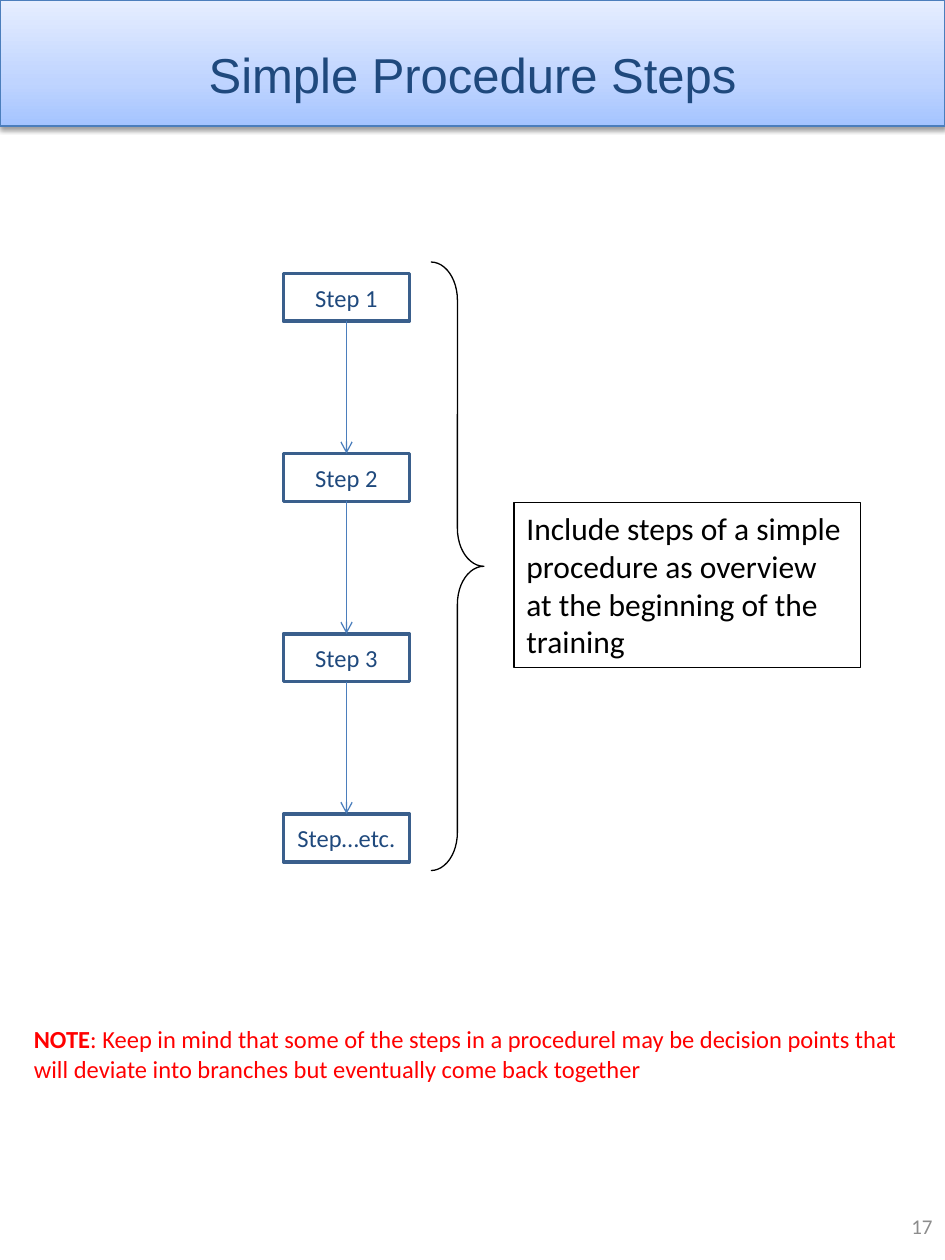
from lxml import etree
from pptx import Presentation
from pptx.dml.color import RGBColor
from pptx.enum.shapes import MSO_CONNECTOR, MSO_SHAPE
from pptx.enum.text import MSO_ANCHOR, MSO_AUTO_SIZE, PP_ALIGN
from pptx.oxml.ns import qn
from pptx.util import Inches, Pt

RECTANGLE, RIGHT_BRACE = MSO_SHAPE.RECTANGLE, MSO_SHAPE.RIGHT_BRACE
STRAIGHT = MSO_CONNECTOR.STRAIGHT
TOP, MIDDLE = MSO_ANCHOR.TOP, MSO_ANCHOR.MIDDLE
LEFT, CENTER, RIGHT = PP_ALIGN.LEFT, PP_ALIGN.CENTER, PP_ALIGN.RIGHT
NO_AUTOFIT = MSO_AUTO_SIZE.NONE
BOTTOM_SITE, TOP_SITE = 2, 0

COLORS = {
    "navy": "1F497D",
    "step_edge": "3A5F8C",
    "blue": "4B7EBC",
    "white": "FFFFFF",
    "black": "000000",
    "red": "FF0000",
    "gray": "8C8C8C",
}
BANNER_STOPS = [(0, "A4C4FF"), (35, "BFD4FF"), (100, "E6EEFF")]
STEPS = ["Step 1", "Step 2", "Step 3", "Step…etc."]


def rgb(name):
    """Return the named palette colour."""
    return RGBColor.from_string(COLORS[name])


def set_line(outlined, color, width):
    """Give a shape or connector a solid line."""
    outlined.line.color.rgb = rgb(color)
    outlined.line.width = Pt(width)


def set_text(holder, runs, size, color, align=LEFT, anchor=TOP, font="Calibri"):
    """Write one paragraph of (text, bold) runs."""
    frame = holder.text_frame
    frame.word_wrap = True
    frame.auto_size = NO_AUTOFIT
    frame.vertical_anchor = anchor
    paragraph = frame.paragraphs[0]
    paragraph.alignment = align
    for text, bold in runs:
        run = paragraph.add_run()
        run.text = text
        run.font.name = font
        run.font.size = Pt(size)
        run.font.bold = bold
        run.font.color.rgb = rgb(color)


def add_block(slide, preset, box, edge, width, fill=None):
    """Add a preset shape with no shadow and an optional fill."""
    block = slide.shapes.add_shape(preset, *map(Inches, box))
    block.shadow.inherit = False
    if fill:
        block.fill.solid()
        block.fill.fore_color.rgb = rgb(fill)
    else:
        block.fill.background()
    set_line(block, edge, width)
    return block


def add_label(slide, box, runs, size, color, align=LEFT, anchor=TOP):
    """Add a text box."""
    label = slide.shapes.add_textbox(*map(Inches, box))
    set_text(label, runs, size, color, align, anchor)


def add_color(parent, value):
    """Append an RGB colour element."""
    return etree.SubElement(parent, qn("a:srgbClr"), val=value)


def add_header(slide, box):
    """Place the shaded banner and the title on it."""
    left, top, width, height = box
    banner = add_block(slide, RECTANGLE, box, "blue", 0.75)
    banner.fill.gradient()
    banner.fill.gradient_angle = 90
    properties = banner._element.spPr
    stops = properties.find(qn("a:gradFill")).find(qn("a:gsLst"))
    for stop in list(stops):
        stops.remove(stop)
    for percent, value in BANNER_STOPS:
        add_color(etree.SubElement(stops, qn("a:gs"), pos=str(percent * 1000)), value)
    shadow = etree.SubElement(
        properties.find(qn("a:effectLst")), qn("a:outerShdw"),
        blurRad=str(Pt(3.1)), dist=str(Pt(1.6)), dir="5400000", rotWithShape="0")
    etree.SubElement(add_color(shadow, COLORS["black"]), qn("a:alpha"), val="38000")

    title = slide.shapes.title
    title.left, title.top = Inches(left), Inches(top + 0.3)
    title.width, title.height = Inches(width), Inches(height - 0.43)
    set_text(title, [("Simple Procedure Steps", False)], 28, "navy", CENTER, MIDDLE, "Arial")
    title._element.addprevious(banner._element)


def add_arrow(slide, upper, lower):
    """Join two steps with a downward arrow."""
    arrow = slide.shapes.add_connector(STRAIGHT, 0, 0, 0, 0)
    arrow.begin_connect(upper, BOTTOM_SITE)
    arrow.end_connect(lower, TOP_SITE)
    set_line(arrow, "blue", 0.75)
    etree.SubElement(arrow.line._get_or_add_ln(), qn("a:tailEnd"), type="arrow")
    etree.SubElement(arrow._element.spPr, qn("a:effectLst"))


def add_flow(slide, box):
    """Spread the steps evenly down the box and link them."""
    left, top, width, height = box
    step_height = 0.38
    pitch = (height - step_height) / (len(STEPS) - 1)
    blocks = []
    for index, name in enumerate(STEPS):
        step_box = (left, top + index * pitch, width, step_height)
        step = add_block(slide, RECTANGLE, step_box, "step_edge", 2, "white")
        set_text(step, [(name, False)], 14, "navy", CENTER, MIDDLE)
        blocks.append(step)
    for upper, lower in zip(blocks, blocks[1:]):
        add_arrow(slide, upper, lower)


def add_summary(slide, box):
    """Place the brace and, beside its point, the framed advice."""
    left, top, width, height = box
    brace = add_block(slide, RIGHT_BRACE, (left, top, 0.42, height), "black", 0.75)
    brace.adjustments[0] = 0.72
    advice_box = (left + 0.66, top + 1.91, width - 0.66, 1.31)
    advice = add_block(slide, RECTANGLE, advice_box, "black", 0.75)
    advice_text = ("Include steps of a simple procedure as overview "
                   "at the beginning of the training")
    set_text(advice, [(advice_text, False)], 18, "black")


def add_note(slide, box):
    """Place the red note."""
    note_text = (": Keep in mind that some of the steps in a procedurel may be decision "
                 "points that will deviate into branches but eventually come back together")
    add_label(slide, box, [("NOTE", True), (note_text, False)], 14, "red")


def add_page_number(slide, box):
    """Place the page number."""
    add_label(slide, box, [("17", False)], 12, "gray", RIGHT, MIDDLE)


def main():
    """Build and save the slide."""
    deck = Presentation()
    deck.slide_width, deck.slide_height = Inches(7.5), Inches(10)
    slide = deck.slides.add_slide(deck.slide_layouts[5])
    add_header(slide, (0, 0, 7.5, 1))
    add_flow(slide, (2.25, 2.17, 1, 4.67))
    add_summary(slide, (3.42, 2.08, 3.41, 4.83))
    add_note(slide, (0.17, 8.08, 7.08, 0.57))
    add_page_number(slide, (5.75, 9.47, 1.75, 0.53))
    deck.save("out.pptx")


if __name__ == "__main__":
    main()
